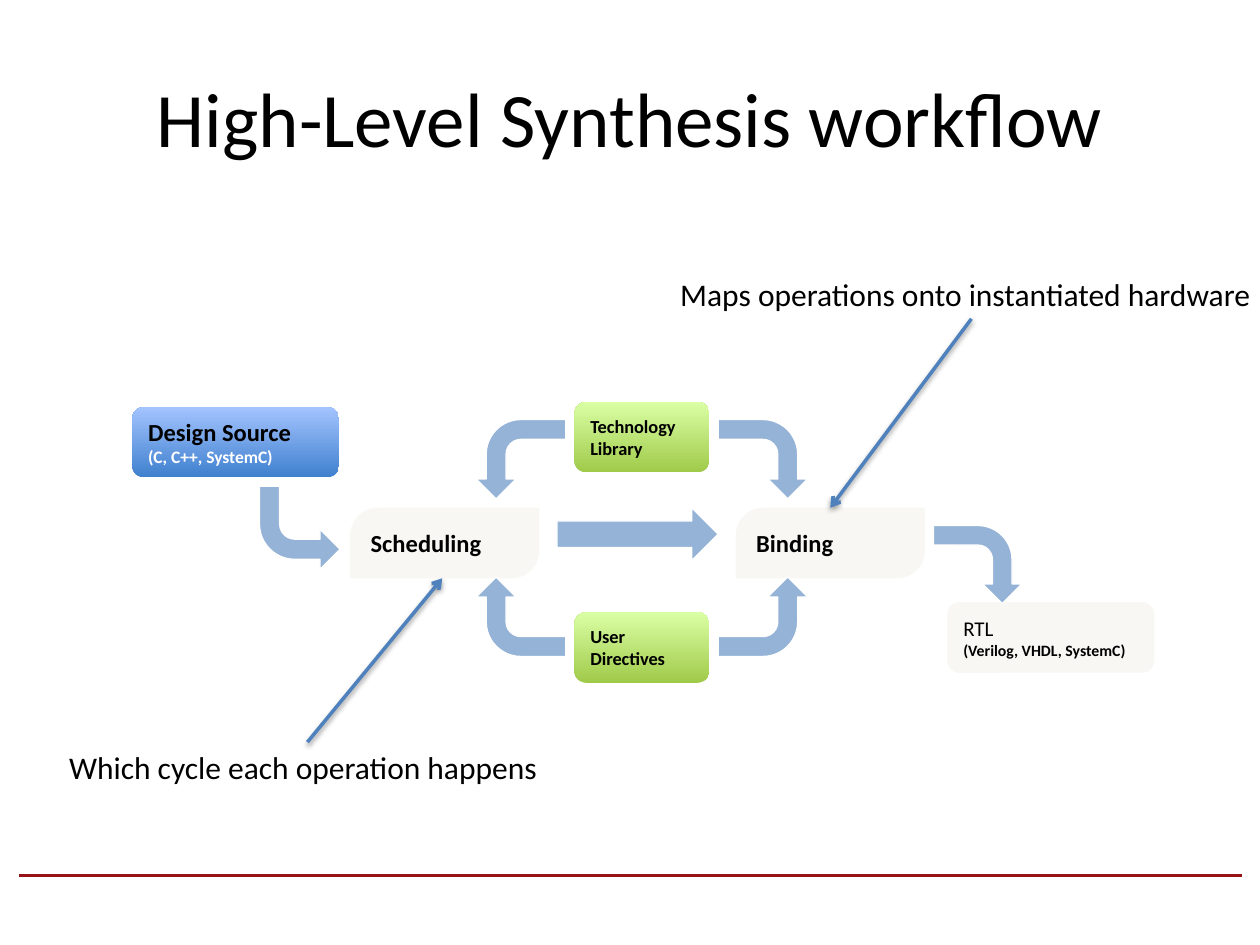
from dataclasses import dataclass
from typing import Optional

from lxml.etree import SubElement
from pptx import Presentation
from pptx.dml.color import RGBColor
from pptx.enum.shapes import MSO_CONNECTOR, MSO_SHAPE as Shp
from pptx.enum.text import MSO_ANCHOR as Anchor, MSO_AUTO_SIZE as AutoSize, PP_ALIGN as Align
from pptx.oxml.ns import qn
from pptx.util import Inches, Pt

BLACK, WHITE, RULE = "000000", "FFFFFF", "971217"
CREAM, ARROW, POINTER = "F8F7F3", "95B3D7", "4F81BD"
BLUE_GRAD = ("3F80CE", "A4C4FF")   # bottom, top
GREEN_GRAD = ("A0CA4A", "DAFFA5")


@dataclass
class Line:
    text: str
    size: float
    bold: bool = True
    color: str = BLACK


@dataclass
class Box:
    kind: int
    at: tuple[float, float, float, float]
    fills: tuple[str, ...]
    lines: list[Line]
    corner: Optional[float] = None


@dataclass
class BlockArrow:
    at: tuple[float, float, float, float]
    rotation: float = 0
    flip: str = ""
    kind: int = Shp.BENT_ARROW


@dataclass
class Note:
    text: str
    at: tuple[float, float, float, float]
    start: tuple[float, float]
    end: tuple[float, float]


def rgb(value: str) -> RGBColor:
    return RGBColor.from_string(value)


def inches(values: tuple) -> list:
    return [Inches(v) for v in values]


def write(tf, lines: list[Line], align=Align.LEFT, **frame) -> None:
    for name, value in frame.items():
        setattr(tf, name, value)
    for i, line in enumerate(lines):
        p = tf.paragraphs[0] if i == 0 else tf.add_paragraph()
        p.alignment = align
        r = p.add_run()
        r.text = line.text
        fmt = {"name": "Calibri", "size": Pt(line.size), "bold": line.bold}
        for name, value in fmt.items():
            setattr(r.font, name, value)
        r.font.color.rgb = rgb(line.color)


def add_box(s, box: Box) -> None:
    sp = s.shapes.add_shape(box.kind, *inches(box.at))
    sp.shadow.inherit = False
    sp.line.fill.background()
    if box.corner is not None:
        sp.adjustments[0] = box.corner
    if len(box.fills) == 1:
        sp.fill.solid()
        sp.fill.fore_color.rgb = rgb(box.fills[0])
    else:
        sp.fill.gradient()
        sp.fill.gradient_angle = 90
        for stop, color in zip(sp.fill.gradient_stops, box.fills):
            stop.color.rgb = rgb(color)
    write(sp.text_frame, box.lines, word_wrap=False, vertical_anchor=Anchor.MIDDLE)


def add_block_arrow(s, arrow: BlockArrow) -> None:
    sp = s.shapes.add_shape(arrow.kind, *inches(arrow.at))
    sp.shadow.inherit = False
    sp.rotation = arrow.rotation
    xfrm = sp._element.spPr.find(qn("a:xfrm"))
    for axis in arrow.flip:
        xfrm.set("flip" + axis, "1")
    sp.fill.solid()
    sp.fill.fore_color.rgb = rgb(ARROW)
    sp.line.color.rgb = rgb(WHITE)
    sp.line.width = Pt(0.75)


def add_line(s, start: tuple, end: tuple, color: str, pointer: bool = False) -> None:
    cx = s.shapes.add_connector(MSO_CONNECTOR.STRAIGHT, *inches(start + end))
    cx.line.color.rgb = rgb(color)
    cx.line.width = Pt(2)
    effects = SubElement(cx._element.spPr, qn("a:effectLst"))
    if pointer:
        SubElement(cx.line._get_or_add_ln(), qn("a:tailEnd"), type="arrow")
        shadow = SubElement(effects, qn("a:outerShdw"), blurRad=str(Pt(3.1)),
                            dist=str(Pt(1.6)), dir="5400000", rotWithShape="0")
        tint = SubElement(shadow, qn("a:srgbClr"), val=BLACK)
        SubElement(tint, qn("a:alpha"), val="38000")


def add_text(s, at: tuple, line: Line, **options) -> None:
    tb = s.shapes.add_textbox(*inches(at))
    write(tb.text_frame, [line], **options)


def stage(left: float, name: str) -> Box:
    return Box(Shp.ROUND_2_DIAG_RECTANGLE, (left, 4.03, 1.5, 0.56), (CREAM,),
               [Line(name, 14)], 0.39)


def side_input(top: float, *words: str) -> Box:
    return Box(Shp.ROUNDED_RECTANGLE, (4.56, top, 1.07, 0.56), GREEN_GRAD,
               [Line(w, 10.5) for w in words])


BOXES = [
    Box(Shp.ROUNDED_RECTANGLE, (1.05, 3.23, 1.64, 0.56), BLUE_GRAD,
        [Line("Design Source", 14), Line("(C, C++, SystemC)", 10, color=WHITE)]),
    stage(2.78, "Scheduling"),
    stage(5.84, "Binding"),
    Box(Shp.ROUNDED_RECTANGLE, (7.52, 4.78, 1.64, 0.56), (CREAM,),
        [Line("RTL", 12, bold=False), Line("(Verilog, VHDL, SystemC)", 9)]),
    side_input(3.19, "Technology", "Library"),
    side_input(4.86, "User", "Directives"),
]

# Bent arrows from the side inputs mirror each other around the centre
LEFT, RIGHT, UPPER, LOWER = 3.82, 5.74, 3.29, 4.54
BEND = (0.63, 0.71)
ARROWS = [
    BlockArrow((2.06, 3.86, 0.64, 0.66), 0, "V"),
    BlockArrow((7.45, 4.13, 0.62, 0.7), 270, "HV"),
    BlockArrow((RIGHT, UPPER, *BEND), 270, "HV"),
    BlockArrow((LEFT, UPPER, *BEND), 90, "V"),
    BlockArrow((RIGHT, LOWER, *BEND), 90, "H"),
    BlockArrow((LEFT, LOWER, *BEND), 270),
    BlockArrow((4.42, 4.03, 1.28, 0.42), kind=Shp.RIGHT_ARROW),
]

NOTES = [
    Note("Which cycle each operation happens", (0.45, 5.89, 3.96, 0.4),
         (2.44, 5.89), (3.51, 4.59)),
    Note("Maps operations onto instantiated hardware", (5.3, 2.13, 4.81, 0.4),
         (7.71, 2.53), (6.59, 4.03)),
]


def main() -> None:
    prs = Presentation()
    prs.slide_width, prs.slide_height = Inches(10), Inches(7.5)
    s = prs.slides.add_slide(prs.slide_layouts[6])

    # Footer rule and title
    add_line(s, (0.15, 6.95), (9.86, 6.95), RULE)
    add_text(s, (0.5, 0.3, 9, 1.25), Line("High-Level Synthesis workflow", 44, False),
             align=Align.CENTER, word_wrap=True, vertical_anchor=Anchor.MIDDLE)

    # Workflow
    for box in BOXES:
        add_box(s, box)
    for arrow in ARROWS:
        add_block_arrow(s, arrow)

    # Explanations with pointers
    for note in NOTES:
        add_line(s, note.start, note.end, POINTER, pointer=True)
        add_text(s, note.at, Line(note.text, 18, False),
                 word_wrap=False, auto_size=AutoSize.SHAPE_TO_FIT_TEXT)

    prs.save("out.pptx")


if __name__ == "__main__":
    main()
